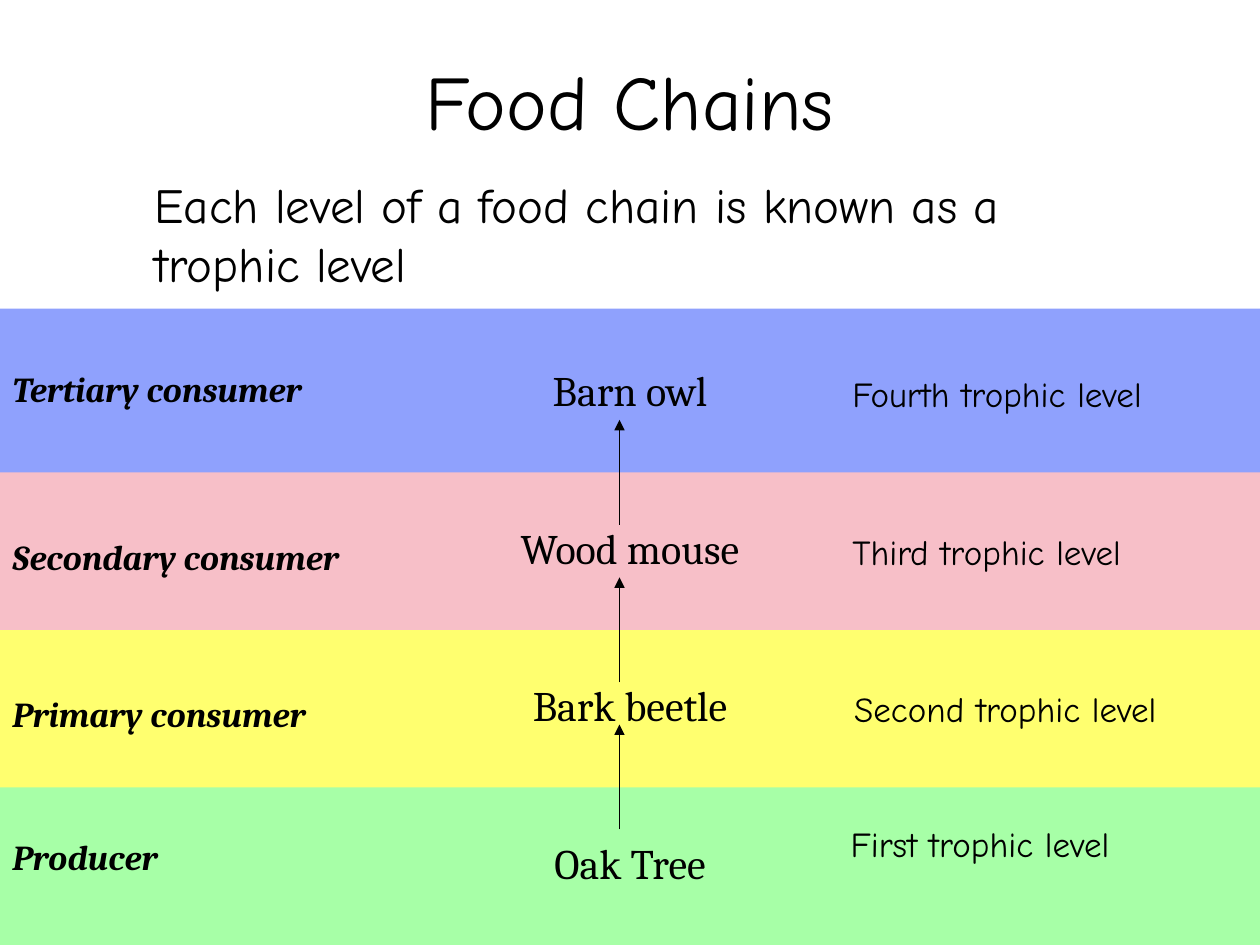
from pptx import Presentation
from pptx.dml.color import RGBColor
from pptx.enum.shapes import MSO_CONNECTOR, MSO_SHAPE
from pptx.enum.text import MSO_ANCHOR, PP_ALIGN
from pptx.oxml.ns import qn
from pptx.util import Pt
from lxml import etree

RECTANGLE, STRAIGHT = MSO_SHAPE.RECTANGLE, MSO_CONNECTOR.STRAIGHT
LEFT, CENTER = PP_ALIGN.LEFT, PP_ALIGN.CENTER
TOP, MIDDLE = MSO_ANCHOR.TOP, MSO_ANCHOR.MIDDLE

BLACK = RGBColor(0x00, 0x00, 0x00)
GREEN = RGBColor(0xA7, 0xFF, 0xA7)
YELLOW = RGBColor(0xFF, 0xFF, 0x6F)
PINK = RGBColor(0xF7, 0xBF, 0xC8)
BLUE = RGBColor(0x8F, 0xA1, 0xFD)

SLIDE_WIDTH, SLIDE_HEIGHT = 720, 540
BAND_HEIGHT, BAND_STEP = 93.6, 90
LOWEST_BAND_TOP = 446.4
ARROW_X = 354


class SlideBuilder:
    heading_font = "Comic Neue"
    band_font = "Cambria"

    def __init__(self, slide):
        self.slide = slide

    def set_text(self, shape, text, size, font, align=LEFT, anchor=TOP, emphasis=False):
        frame = shape.text_frame
        frame.text = text
        frame.vertical_anchor = anchor
        paragraph = frame.paragraphs[0]
        paragraph.alignment = align
        style = paragraph.runs[0].font
        style.name, style.size = font, Pt(size)
        style.bold = style.italic = emphasis
        style.color.rgb = BLACK

    def text(self, text, left, top, width, height, size, font=heading_font,
             wrap=True, indent=0, **style):
        box = self.slide.shapes.add_textbox(Pt(left), Pt(top), Pt(width), Pt(height))
        box.text_frame.word_wrap = wrap
        box.text_frame.margin_left = Pt(7.2 + indent)
        self.set_text(box, text, size, font, **style)

    def band(self, text, top, color):
        band = self.slide.shapes.add_shape(
            RECTANGLE, 0, Pt(top), Pt(SLIDE_WIDTH), Pt(BAND_HEIGHT))
        band.shadow.inherit = False
        band.fill.solid()
        band.fill.fore_color.rgb = color
        band.line.fill.background()
        band.text_frame.margin_top = Pt(32)
        self.set_text(band, text, 24, self.band_font, align=CENTER)

    def arrow(self, x, start, end):
        arrow = self.slide.shapes.add_connector(STRAIGHT, Pt(x), Pt(start), Pt(x), Pt(end))
        arrow.line.color.rgb = BLACK
        arrow.line.width = Pt(0.75)
        properties = arrow._element.spPr
        etree.SubElement(properties.find(qn("a:ln")), qn("a:tailEnd"), type="triangle")
        etree.SubElement(properties, qn("a:effectLst"))


def main():
    presentation = Presentation()
    presentation.slide_width, presentation.slide_height = Pt(SLIDE_WIDTH), Pt(SLIDE_HEIGHT)
    builder = SlideBuilder(presentation.slides.add_slide(presentation.slide_layouts[6]))

    # Title
    builder.text("Food Chains", 54, 12, 612, 90, 44, align=CENTER, anchor=MIDDLE)

    # Bands from producer upwards, each overlapping the one below
    bands = [("Oak Tree", GREEN), ("Bark beetle", YELLOW),
             ("Wood mouse", PINK), ("Barn owl", BLUE)]
    for index, (organism, color) in enumerate(bands):
        builder.band(organism, LOWEST_BAND_TOP - index * BAND_STEP, color)

    # Arrows from each organism to the one that eats it
    for start, end in [(474, 414), (390, 330), (300, 240)]:
        builder.arrow(ARROW_X, start, end)

    # Consumer roles: text, top, width
    roles = [("Producer", 474, 108), ("Primary consumer", 392.4, 214.5),
             ("Secondary consumer", 302.4, 240), ("Tertiary consumer", 206.4, 214)]
    for role, top, width in roles:
        builder.text(role, 0, top, width, 31, 20, builder.band_font, emphasis=True)

    # Trophic levels: ordinal, left, top, width
    levels = [("First", 479, 466.5, 183.5), ("Second", 481, 389.5, 204.5),
              ("Third", 480, 299.5, 188.5), ("Fourth", 480, 209.5, 200)]
    for ordinal, left, top, width in levels:
        builder.text(f"{ordinal} trophic level", left, top, width, 35.3, 20, wrap=False)

    # Definition
    builder.text("Each level of a food chain is known as a trophic level",
                 54, 96, 612, 108, 28, indent=27)

    presentation.save("out.pptx")


if __name__ == "__main__":
    main()
